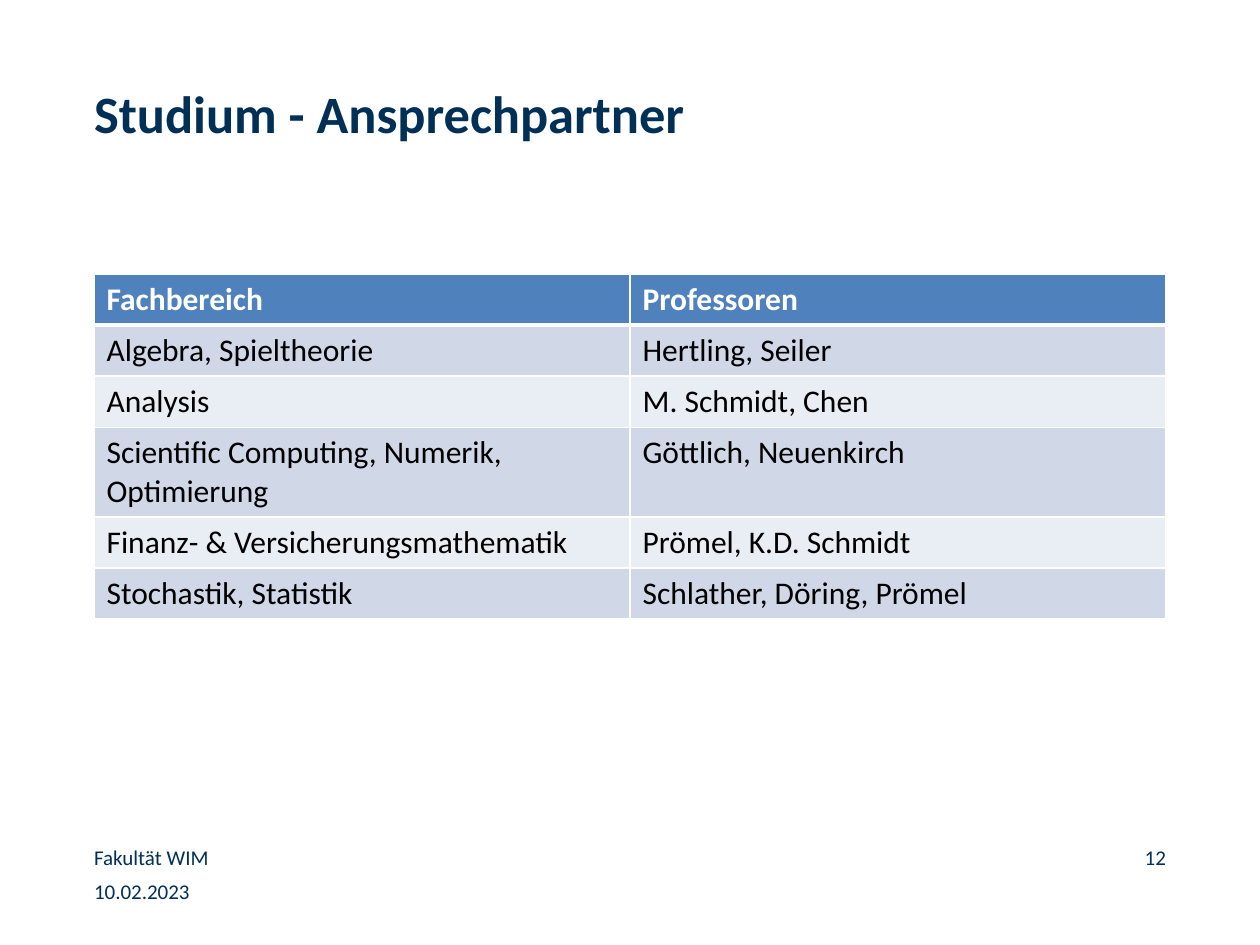
from lxml import etree
from pptx import Presentation
from pptx import util as u
from pptx.dml.color import RGBColor
from pptx.enum import text
from pptx.oxml.ns import qn

# Content
TITLE = "Studium - Ansprechpartner"
ROWS = [
    ("Fachbereich", "Professoren"),
    ("Algebra, Spieltheorie", "Hertling, Seiler"),
    ("Analysis", "M. Schmidt, Chen"),
    ("Scientific Computing, Numerik, Optimierung", "Göttlich, Neuenkirch"),
    ("Finanz- & Versicherungsmathematik", "Prömel, K.D. Schmidt"),
    ("Stochastik, Statistik", "Schlather, Döring, Prömel"),
]
LEFT, RIGHT = text.PP_ALIGN.LEFT, text.PP_ALIGN.RIGHT
FOOTERS = [  # wording, left, top, width, alignment
    ("10.02.2023", 94, 879, 294, LEFT),
    ("Fakultät WIM", 94, 845, 400, LEFT),
    ("12", 1021, 845, 145, RIGHT),
]
COLORS = {"navy": "003056", "header": "4F81BD", "odd": "D0D8E8",
          "even": "E9EDF4", "white": "FFFFFF", "black": "000000"}
FONT = "Calibri"
TABLE_LEFT, TABLE_TOP, TABLE_WIDTH, ROW_HEIGHT = 94, 274, 1072, 51


def px(*lengths):
    return [u.Emu(round(length * 914400 / 126)) for length in lengths]


def style(para, size, color, bold=False, align=LEFT):
    para.alignment = align
    font = para.font
    font.name, font.size, font.bold = FONT, u.Pt(size), bold
    font.color.rgb = RGBColor.from_string(COLORS[color])


def fill_frame(frame, wording, size, bold=False, align=LEFT):
    frame.auto_size = text.MSO_AUTO_SIZE.NONE
    frame.word_wrap = True
    frame.vertical_anchor = text.MSO_ANCHOR.TOP
    frame.margin_left = frame.margin_top = frame.margin_right = frame.margin_bottom = 0
    frame.text = wording
    style(frame.paragraphs[0], size, "navy", bold, align)


def add_borders(cell, top, bottom):
    props = cell._tc.get_or_add_tcPr()
    widths = {"a:lnL": 1, "a:lnR": 1, "a:lnT": top, "a:lnB": bottom}
    for place, (tag, width) in enumerate(widths.items()):
        line = etree.Element(qn(tag), w=str(u.Pt(width)))
        solid = etree.SubElement(line, qn("a:solidFill"))
        etree.SubElement(solid, qn("a:srgbClr"), val=COLORS["white"])
        props.insert(place, line)


deck = Presentation()
deck.slide_width, deck.slide_height = px(1260, 945)
page = deck.slides.add_slide(deck.slide_layouts[5])

# Title
title = page.shapes.title
title.left, title.top, title.width, title.height = px(94, 81, 755, 158)
fill_frame(title.text_frame, TITLE, 30, bold=True)

# Table
table = page.shapes.add_table(
    len(ROWS), len(ROWS[0]),
    *px(TABLE_LEFT, TABLE_TOP, TABLE_WIDTH, ROW_HEIGHT * len(ROWS))).table
for r, row in enumerate(ROWS):
    header = r == 0
    band = "header" if header else "odd" if r % 2 else "even"
    for c, wording in enumerate(row):
        cell = table.cell(r, c)
        cell.text = wording
        style(cell.text_frame.paragraphs[0], 18,
              "white" if header else "black", bold=header)
        cell.fill.solid()
        cell.fill.fore_color.rgb = RGBColor.from_string(COLORS[band])
        add_borders(cell, top=3 if r == 1 else 1, bottom=3 if header else 1)

# Footer
for wording, left, top, width, align in FOOTERS:
    box = page.shapes.add_textbox(*px(left, top, width, 25))
    fill_frame(box.text_frame, wording, 12, align=align)

deck.save("out.pptx")
